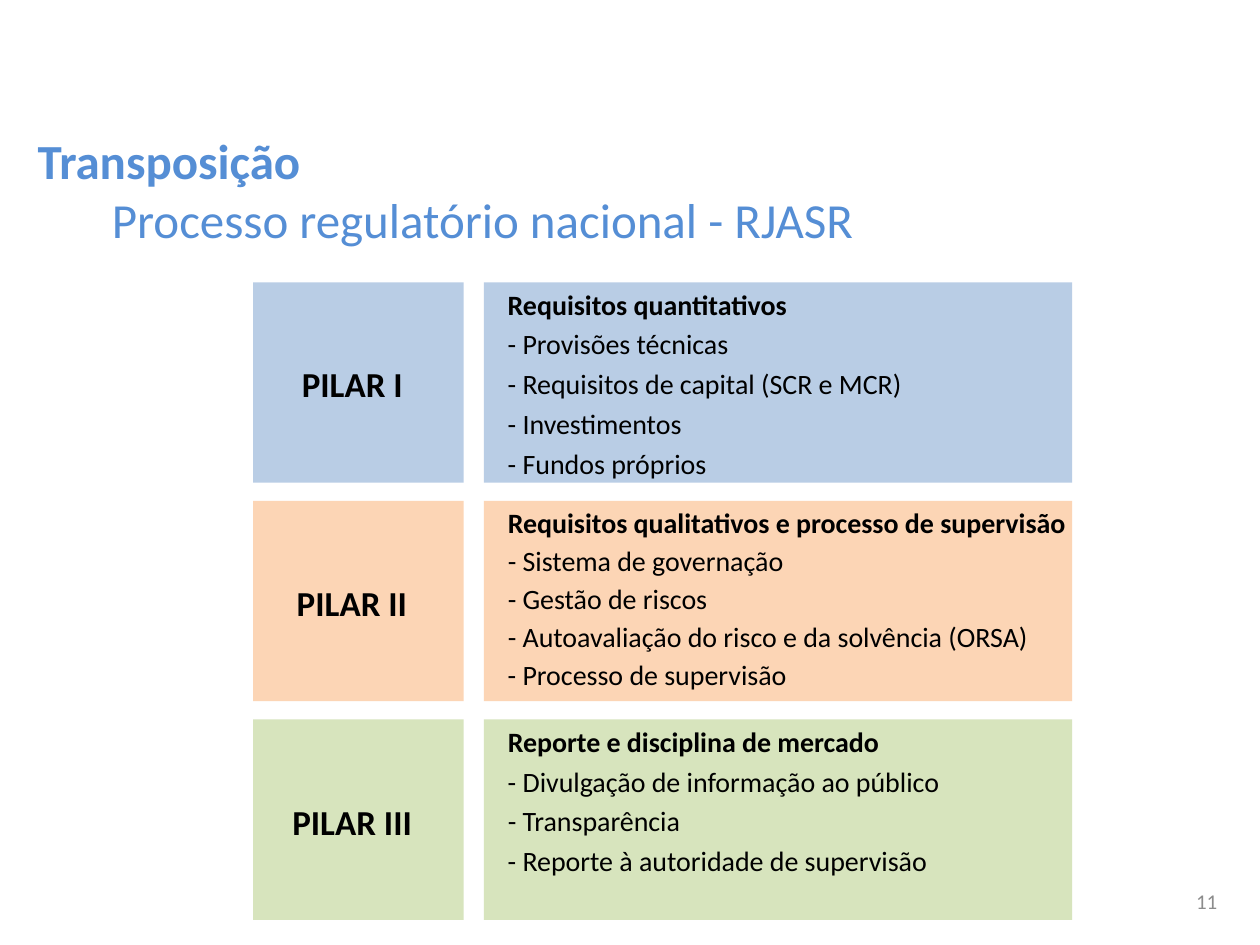
from pptx import Presentation
from pptx.dml.color import RGBColor as Rgb
from pptx.enum.shapes import MSO_SHAPE as Shape
from pptx.enum.text import MSO_ANCHOR as Anchor, PP_ALIGN as Align
from pptx.util import Inches, Pt

COLORS = {"blue": "B9CDE5", "peach": "FCD5B5", "green": "D7E4BD",
          "title": "558ED5", "text": "000000", "page": "8C8C8C"}
TOP, STEP, HEIGHT = 2.24, 1.735, 1.59
PILLARS = [
    ("PILAR I", 0.81, "blue", 0.315, [
        ("Requisitos quantitativos", 2.24),
        ("- Provisões técnicas", 1.77),
        ("- Requisitos de capital (SCR e MCR)", 3.16),
        ("- Investimentos", 1.4),
        ("- Fundos próprios", 1.6)]),
    ("PILAR II", 0.89, "peach", 0.3, [
        ("Requisitos qualitativos e processo de supervisão", 4.49),
        ("- Sistema de governação", 2.22),
        ("- Gestão de riscos", 1.61),
        ("- Autoavaliação do risco e da solvência (ORSA)", 4.18),
        ("- Processo de supervisão", 2.24)]),
    ("PILAR III", 0.96, "green", 0.315, [
        ("Reporte e disciplina de mercado", 2.99),
        ("- Divulgação de informação ao público", 3.46),
        ("- Transparência", 1.38),
        ("- Reporte à autoridade de supervisão", 3.37)]),
]


def add_run(para, text, size, color, bold=False):
    """Add one styled run to a paragraph."""
    run = para.add_run()
    run.text = text
    font = run.font
    font.name, font.size, font.bold = "Calibri", Pt(size), bold
    font.color.rgb = Rgb.from_string(COLORS[color])


def add_box(slide, left, top, width, height):
    """Add a wrapping text box and return its frame."""
    box = slide.shapes.add_textbox(*map(Inches, (left, top, width, height)))
    box.text_frame.word_wrap = True
    return box.text_frame


def add_line(slide, text, left, top, width, size, bold):
    """Add a single line of text without margins."""
    frame = add_box(slide, left, top, width, size / 60)
    frame.word_wrap = False
    frame.margin_left = frame.margin_right = 0
    frame.margin_top = frame.margin_bottom = 0
    add_run(frame.paragraphs[0], text, size, "text", bold)


def add_panel(slide, left, top, width, color):
    """Add a plain filled rectangle."""
    panel = slide.shapes.add_shape(
        Shape.RECTANGLE, *map(Inches, (left, top, width, HEIGHT)))
    panel.shadow.inherit = False
    panel.fill.solid()
    panel.fill.fore_color.rgb = Rgb.from_string(COLORS[color])
    panel.line.fill.background()


def add_pillar(slide, top, name, width, color, pitch, lines):
    """Add one pillar: a name panel and a panel of requirements."""
    add_panel(slide, 2.01, top, 1.67, color)
    add_panel(slide, 3.84, top, 4.67, color)
    add_line(slide, name, 2.8 - width / 2, top + 0.64, width, 20, True)
    for row, (text, span) in enumerate(lines):
        add_line(slide, text, 4.03, top + 0.04 + row * pitch, span, 16, row == 0)


def add_title(slide):
    """Add the two-line title with a hanging indent."""
    para = add_box(slide, 0.2, 0.99, 9.61, 0.92).paragraphs[0]
    props = para._p.get_or_add_pPr()
    props.set("marL", str(Inches(0.59)))
    props.set("indent", str(Inches(-0.59)))
    add_run(para, "Transposição", 28, "title", True)
    para.add_line_break()
    add_run(para, "Processo regulatório nacional - RJASR", 28, "title")


def add_page(slide):
    """Add the page number."""
    frame = add_box(slide, 7.68, 6.98, 2.08, 0.34)
    frame.vertical_anchor = Anchor.MIDDLE
    para = frame.paragraphs[0]
    para.alignment = Align.RIGHT
    add_run(para, "11", 12, "page")


def main():
    """Build and save the slide."""
    deck = Presentation()
    deck.slide_width, deck.slide_height = Inches(10), Inches(7.5)
    slide = deck.slides.add_slide(deck.slide_layouts[6])
    add_title(slide)
    for row, pillar in enumerate(PILLARS):
        add_pillar(slide, TOP + row * STEP, *pillar)
    add_page(slide)
    deck.save("out.pptx")


if __name__ == "__main__":
    main()
